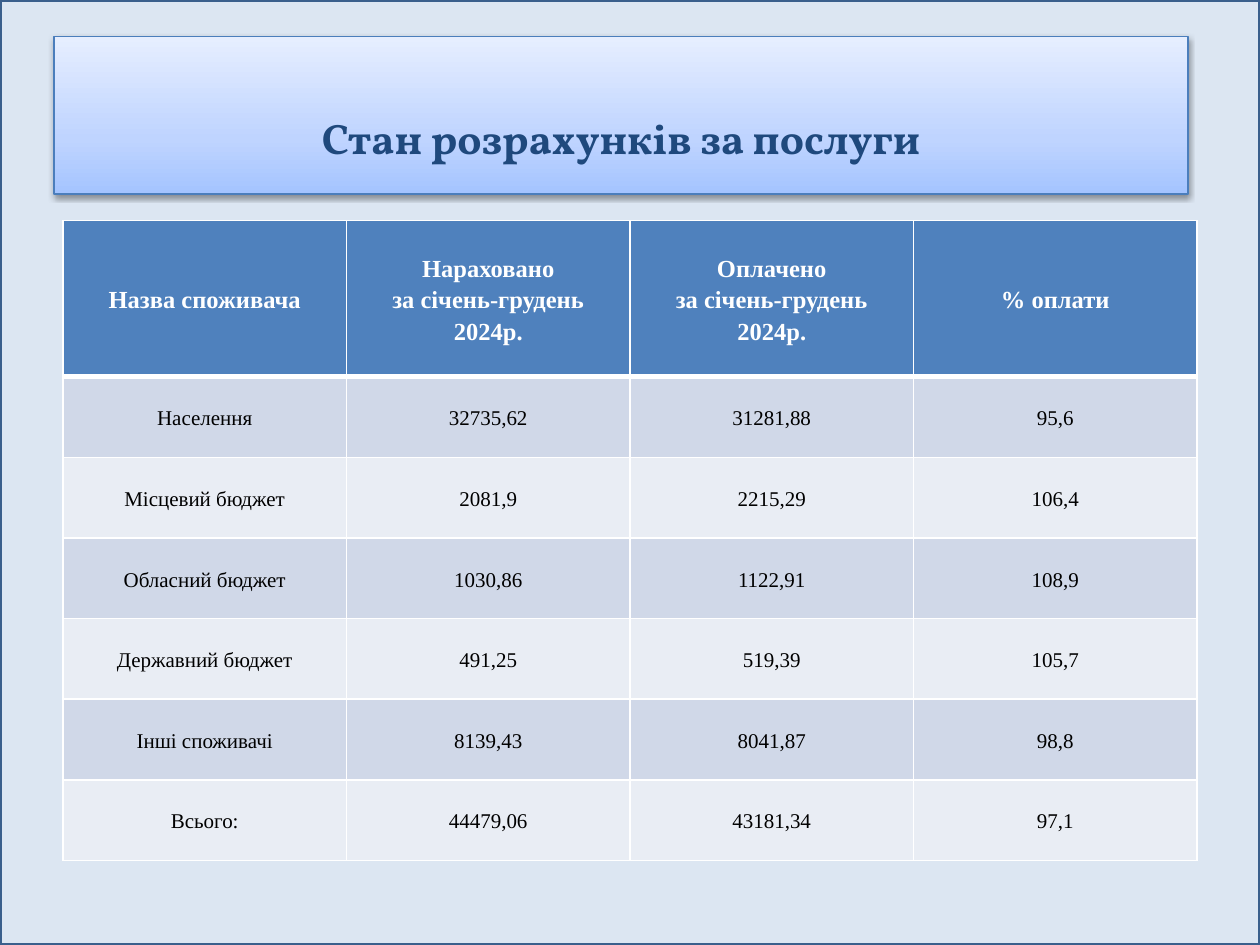
from copy import deepcopy

from lxml.etree import SubElement
from pptx import Presentation
from pptx.dml.color import RGBColor
from pptx.enum.shapes import MSO_SHAPE as Shape
from pptx.enum.text import MSO_ANCHOR as Anchor, PP_ALIGN as Align
from pptx.oxml.ns import qn
from pptx.util import Inches, Pt

WHITE = RGBColor(0xFF, 0xFF, 0xFF)
BLACK = RGBColor(0x00, 0x00, 0x00)
PALE_BLUE = RGBColor(0xDC, 0xE6, 0xF2)
FRAME_BLUE = RGBColor(0x3A, 0x5F, 0x8C)
TITLE_LINE = RGBColor(0x4B, 0x7E, 0xBC)
TITLE_TEXT = RGBColor(0x1F, 0x49, 0x7D)
HEADER_FILL = RGBColor(0x4F, 0x81, 0xBD)
BAND_FILLS = (RGBColor(0xD0, 0xD8, 0xE8), RGBColor(0xE9, 0xED, 0xF4))
TITLE_STOPS = (
    (0, RGBColor(0xA4, 0xC4, 0xFF)),
    (0.35, RGBColor(0xBF, 0xD4, 0xFF)),
    (1, RGBColor(0xE6, 0xEE, 0xFF)),
)

SLIDE_WIDTH, SLIDE_HEIGHT = Inches(10), Inches(7.5)
CONTENT_WIDTH = Inches(9)
HEADER_HEIGHT, ROW_HEIGHT = Inches(1.24), Inches(0.64)

ROWS = (
    ("Назва споживача", "Нараховано\nза січень-грудень\n2024р.",
     "Оплачено\nза січень-грудень\n2024р.", "% оплати"),
    ("Населення", "32735,62", "31281,88", "95,6"),
    ("Місцевий бюджет", "2081,9", "2215,29", "106,4"),
    ("Обласний бюджет", "1030,86", "1122,91", "108,9"),
    ("Державний бюджет", "491,25", "519,39", "105,7"),
    ("Інші споживачі", "8139,43", "8041,87", "98,8"),
    ("Всього:", "44479,06", "43181,34", "97,1"),
)


def style_paragraph(paragraph, font_name, size, color, bold):
    paragraph.alignment = Align.CENTER
    font = paragraph.font
    font.name, font.size, font.bold = font_name, Pt(size), bold
    font.color.rgb = color


def add_box(slide, left, top, width, height, line_color, line_width):
    box = slide.shapes.add_shape(Shape.RECTANGLE, left, top, width, height)
    box.shadow.inherit = False
    box.line.color.rgb = line_color
    box.line.width = Pt(line_width)
    return box


def fill_gradient(shape, stops):
    """Fill from bottom to top with three colours."""
    fill = shape.fill
    fill.gradient()
    fill.gradient_angle = 90
    stop_list = shape.element.spPr.find(".//" + qn("a:gsLst"))
    stop_list.append(deepcopy(stop_list[-1]))
    for stop, (position, color) in zip(fill.gradient_stops, stops):
        stop.position = position
        stop.color.rgb = color


def add_shadow(shape):
    effects = shape.element.spPr.find(qn("a:effectLst"))
    shadow = SubElement(effects, qn("a:outerShdw"), blurRad=str(Pt(3.1)),
                        dist=str(Pt(1.6)), dir="5400000", rotWithShape="0")
    color = SubElement(shadow, qn("a:srgbClr"), val=str(BLACK))
    SubElement(color, qn("a:alpha"), val="38000")


def add_title(slide, text):
    box = add_box(slide, Inches(0.43), Inches(0.29), CONTENT_WIDTH,
                  Inches(1.25), TITLE_LINE, 0.75)
    fill_gradient(box, TITLE_STOPS)
    add_shadow(box)
    frame = box.text_frame
    frame.word_wrap = True
    frame.vertical_anchor = Anchor.MIDDLE
    frame.margin_top = Inches(0.4)  # the title sits below the middle
    frame.text = text
    style_paragraph(frame.paragraphs[0], "Vollkorn", 24.3, TITLE_TEXT, True)


def set_borders(cell, top, bottom):
    properties = cell._tc.get_or_add_tcPr()
    for side, width in (("L", 1), ("R", 1), ("T", top), ("B", bottom)):
        line = SubElement(properties, qn(f"a:ln{side}"), w=str(Pt(width)))
        fill = SubElement(line, qn("a:solidFill"))
        SubElement(fill, qn("a:srgbClr"), val=str(WHITE))


def fill_cell(cell, text, row):
    is_header = row == 0
    set_borders(cell, 3 if row == 1 else 1, 3 if is_header else 1)
    cell.fill.solid()
    cell.fill.fore_color.rgb = HEADER_FILL if is_header else BAND_FILLS[(row - 1) % 2]
    cell.margin_left = cell.margin_right = Inches(0.07)
    cell.margin_top = cell.margin_bottom = 0
    cell.vertical_anchor = Anchor.MIDDLE
    cell.text = text
    size, color = (14, WHITE) if is_header else (12, BLACK)
    for paragraph in cell.text_frame.paragraphs:
        paragraph.line_spacing = 1.15
        style_paragraph(paragraph, "Times New Roman", size, color, is_header)


def add_payment_table(slide, rows):
    column_count = len(rows[0])
    height = HEADER_HEIGHT + ROW_HEIGHT * (len(rows) - 1)
    table = slide.shapes.add_table(len(rows), column_count, Inches(0.5),
                                   Inches(1.75), CONTENT_WIDTH, height).table
    for column in table.columns:
        column.width = CONTENT_WIDTH // column_count
    for row, texts in enumerate(rows):
        table.rows[row].height = ROW_HEIGHT if row else HEADER_HEIGHT
        for column, text in enumerate(texts):
            fill_cell(table.cell(row, column), text, row)


def main():
    presentation = Presentation()
    presentation.slide_width = SLIDE_WIDTH
    presentation.slide_height = SLIDE_HEIGHT
    slide = presentation.slides.add_slide(presentation.slide_layouts[6])

    # Framed background
    background = add_box(slide, 0, 0, SLIDE_WIDTH, SLIDE_HEIGHT, FRAME_BLUE, 2)
    background.fill.solid()
    background.fill.fore_color.rgb = PALE_BLUE

    # Title and table
    add_title(slide, "Стан розрахунків за послуги")
    add_payment_table(slide, ROWS)

    presentation.save("out.pptx")


if __name__ == "__main__":
    main()
